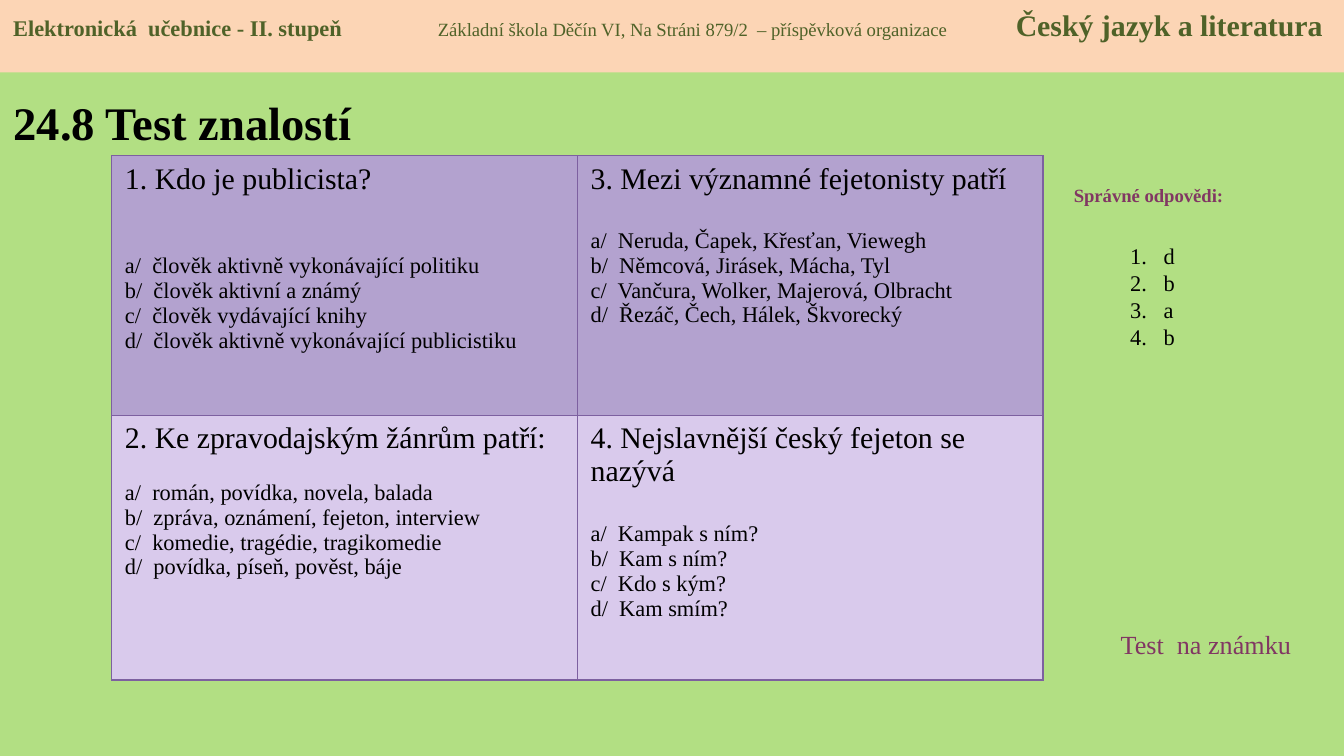
from lxml import etree
from pptx import Presentation
from pptx.dml.color import RGBColor
from pptx.enum import shapes, text
from pptx.oxml import ns
from pptx.util import Inches, Pt

FONT = "Times New Roman"
BLACK, PLUM, OLIVE = "000000", "813763", "4F6228"
GREEN, PEACH, BORDER = "B2DF83", "FCD5B5", "7D60A0"
ROW_FILLS = ["B3A2CF", "D9CAEC"]

# Question, gap before the answers in points, answers
QUESTIONS = [
    [
        ("1. Kdo je publicista?", 31, [
            "a/  člověk aktivně vykonávající politiku",
            "b/  člověk aktivní a známý",
            "c/  člověk vydávající knihy",
            "d/  člověk aktivně vykonávající publicistiku"]),
        ("3. Mezi významné fejetonisty patří", 17.5, [
            "a/  Neruda, Čapek, Křesťan, Viewegh",
            "b/  Němcová, Jirásek, Mácha, Tyl",
            "c/  Vančura, Wolker, Majerová, Olbracht",
            "d/  Řezáč, Čech, Hálek, Škvorecký"]),
    ],
    [
        ("2. Ke zpravodajským žánrům patří:", 13.5, [
            "a/  román, povídka, novela, balada",
            "b/  zpráva, oznámení, fejeton, interview",
            "c/  komedie, tragédie, tragikomedie",
            "d/  povídka, píseň, pověst, báje"]),
        ("4. Nejslavnější český fejeton se nazývá", 18, [
            "a/  Kampak s ním?",
            "b/  Kam s ním?",
            "c/  Kdo s kým?",
            "d/  Kam smím?"]),
    ],
]


def color(value):
    return RGBColor.from_string(value)


def style(font, size, value=BLACK, bold=False):
    font.name = FONT
    font.size = Pt(size)
    font.bold = bold
    font.color.rgb = color(value)


def add_lines(frame, lines, size, value=BLACK, bold=False):
    """Fill the frame with one paragraph for each line."""
    frame.text = "\n".join(lines)
    for paragraph in frame.paragraphs:
        style(paragraph.font, size, value, bold)
    return frame.paragraphs


def add_label(slide, box, lines, size, value=BLACK, bold=False):
    frame = slide.shapes.add_textbox(*map(Inches, box)).text_frame
    frame.word_wrap = True
    return add_lines(frame, lines, size, value, bold)


def set_borders(cell, value, width):
    properties = cell._tc.get_or_add_tcPr()
    for position, side in enumerate(("lnL", "lnR", "lnT", "lnB")):
        line = etree.Element(ns.qn(f"a:{side}"), w=str(Pt(width)))
        fill = etree.SubElement(line, ns.qn("a:solidFill"))
        etree.SubElement(fill, ns.qn("a:srgbClr"), val=value)
        properties.insert(position, line)


def add_title(slide, box):
    title = slide.shapes.title
    title.left, title.top, title.width, title.height = map(Inches, box)
    frame = title.text_frame
    frame.vertical_anchor = text.MSO_ANCHOR.MIDDLE
    paragraph = add_lines(frame, ["24.8 Test znalostí"], 25, bold=True)[0]
    paragraph.alignment = text.PP_ALIGN.LEFT


def add_questions(slide, box):
    height = box[3]
    table = slide.shapes.add_table(2, 2, *map(Inches, box)).table
    table.first_row = table.horz_banding = False
    table.rows[0].height = Inches(1.93)
    table.rows[1].height = Inches(height - 1.93)
    for row, questions in enumerate(QUESTIONS):
        for column, (question, gap, answers) in enumerate(questions):
            cell = table.cell(row, column)
            cell.fill.solid()
            cell.fill.fore_color.rgb = color(ROW_FILLS[row])
            set_borders(cell, BORDER, 0.75)
            paragraphs = add_lines(cell.text_frame, [question, *answers], 12)
            paragraphs[0].font.size = Pt(16)
            paragraphs[1].space_before = Pt(gap)


def add_answer_key(slide, box):
    left, top, width, height = box
    heading = add_label(slide, (left, top, width, 0.27),
                        ["Správné odpovědi:"], 10, PLUM, True)[0]
    heading.alignment = text.PP_ALIGN.CENTER

    # Numbered list of the right letters
    frame = slide.shapes.add_textbox(
        *map(Inches, (left + 0.55, top + 0.43, 0.55, height - 0.43))).text_frame
    frame.word_wrap = True
    frame.text = "\n".join("dbab")
    for paragraph in frame.paragraphs:
        properties = paragraph._p.get_or_add_pPr()
        properties.set("marL", str(Inches(0.25)))
        properties.set("indent", str(-Inches(0.25)))
        etree.SubElement(properties, ns.qn("a:buFont"), typeface=FONT)
        etree.SubElement(properties, ns.qn("a:buAutoNum"), type="arabicPeriod")
        paragraph.line_spacing = Pt(14.5)
        style(paragraph.font, 12)


def add_header(slide, box):
    bar = slide.shapes.add_shape(shapes.MSO_SHAPE.RECTANGLE, *map(Inches, box))
    bar.shadow.inherit = False
    bar.fill.solid()
    bar.fill.fore_color.rgb = color(PEACH)
    bar.line.fill.background()
    frame = bar.text_frame
    frame.vertical_anchor = text.MSO_ANCHOR.TOP
    paragraph = frame.paragraphs[0]
    paragraph.alignment = text.PP_ALIGN.LEFT

    # Tab stops separate the three parts
    tabs = etree.SubElement(paragraph._p.get_or_add_pPr(), ns.qn("a:tabLst"))
    for stop in (3.16, 7.46):
        etree.SubElement(tabs, ns.qn("a:tab"), pos=str(Inches(stop)), algn="l")
    for words, size, bold in (
            ("Elektronická  učebnice - II. stupeň\t", 12, True),
            ("Základní škola Děčín VI, Na Stráni 879/2  – příspěvková organizace\t",
             10, False),
            ("Český jazyk a literatura", 16, True)):
        run = paragraph.add_run()
        run.text = words
        style(run.font, size, OLIVE, bold)


def main():
    # Widescreen page, 16 to 9
    presentation = Presentation()
    presentation.slide_width = Inches(10)
    presentation.slide_height = Inches(10 * 9 / 16)
    slide = presentation.slides.add_slide(presentation.slide_layouts[5])
    slide.background.fill.solid()
    slide.background.fill.fore_color.rgb = color(GREEN)

    add_title(slide, (0, 0.58, 3.54, 0.65))
    add_questions(slide, (0.83, 1.16, 6.93, 3.9))
    add_answer_key(slide, (7.76, 1.32, 1.57, 1.54))
    add_label(slide, (8.24, 4.63, 1.57, 0.34), ["Test  na známku"], 14, PLUM)
    add_header(slide, (0, 0, 10, 0.54))
    presentation.save("out.pptx")


if __name__ == "__main__":
    main()
